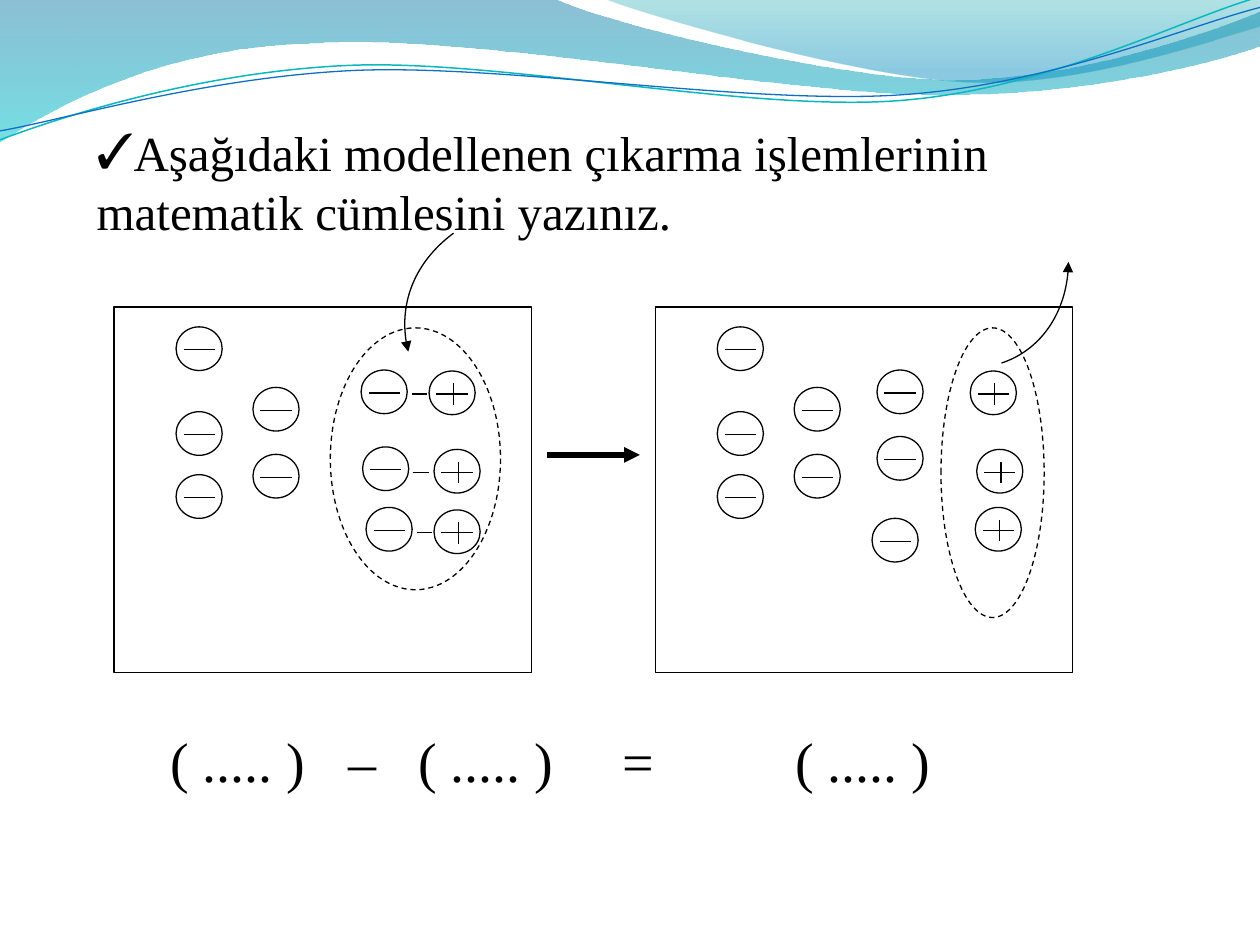
import math
import pptx
import pptx.util
import pptx.dml.color
import pptx.enum.dml
import pptx.enum.shapes
import pptx.oxml
import pptx.oxml.ns

Cm, Pt = pptx.util.Cm, pptx.util.Pt
RGB = pptx.dml.color.RGBColor
SHAPE = pptx.enum.shapes.MSO_SHAPE
BLACK = RGB(0, 0, 0)
TEAL, BLUE = RGB(0x0A, 0xB8, 0xBF), RGB(0x0F, 0x6F, 0xC6)
FONT = "Times New Roman"

TITLE = "Aşağıdaki modellenen çıkarma işlemlerinin matematik cümlesini yazınız."
TERMS = ["( ..... )", "–", "( ..... )", "=", "( ..... )"]
TABS = [3.6, 5, 9.12, 12.6]

# All lengths are in cm. A path is a start point, then lines (x, y)
# or Bézier curves (x1, y1, x2, y2, x, y). Frames are left, top, width, height.
# Bands: frame, path, gradient stops as (position, colour, opacity %)
BANDS = [
    ((-0.03, -0.03, 25.45, 2.9),
     [(0, 0), (11.18, -0.03), (12.09, 0.43, 16.87, 1.6, 19.25, 1.6),
      (21.67, 1.6, 24.33, 0.66, 25.4, 0.23), (25.43, 0.91),
      (24.97, 1.12, 22.1, 1.93, 18.95, 1.91),
      (15.8, 1.91, 9.7, 0.71, 6.53, 0.86),
      (3.28, 0.91, 1.17, 2.11, -0.03, 2.87)],
     [(0, RGB(0x00, 0x74, 0xA1), 45), (1, RGB(0x00, 0xC6, 0xCF), 55)]),
    ((12.17, -0.03, 13.23, 1.78),
     [(12.17, -0.03), (12.93, 0.28, 17.32, 1.57, 19.53, 1.65),
      (21.74, 1.75, 24.41, 0.81, 25.4, 0.53), (25.4, 0)],
     [(0, RGB(0x00, 0xA1, 0xA9), 30), (0.8, RGB(0x00, 0x8B, 0xBF), 45)]),
]
WAVES = [
    ((-0.05, 0.56, 25.45, 1.8),
     [(0, 2.82), (1.22, 2.36, 4.01, 1.45, 7.04, 1.32),
      (10.03, 1.19, 15.06, 2.26, 18.11, 2.03),
      (21.16, 1.8, 23.83, 0.38, 25.35, -0.05)], TEAL, 0.85),
    ((-0.05, 0.76, 25.48, 1.47),
     [(0, 2.64), (1.19, 2.44, 4.17, 1.55, 7.19, 1.42),
      (10.24, 1.3, 15.16, 2.13, 18.21, 1.91),
      (21.23, 1.7, 23.9, 0.53, 25.4, 0.15)], BLUE, 0.75),
]
TILT = -2.7
# Arcs: frame, path, corner of the wedge, turn in degrees
ARCS = [
    ((7.92, 4.72, 2.49, 2.08),
     [(9.14, 4.7), (8.36, 5.28, 8, 6.22, 8.23, 7.09)], (10.64, 6.45), 165.1),
    ((19.66, 5.28, 1.88, 2.03),
     [(20.19, 7.32), (20.98, 7.06, 21.54, 6.22, 21.54, 5.28)],
     (19.66, 5.28), 0),
]

# Counters are placed from the top left corner of their box
TOP, WIDE, HIGH = 6.19, 8.41, 7.37
ALONE = [(1.25, 0.4), (1.25, 2.11), (1.25, 3.38), (2.8, 1.62), (2.8, 2.97)]
BOXES = [
    {"left": 2.3, "paired": True, "oval": (4.36, 0.42, 3.43, 5.28),
     "minus": [(4.98, 1.27), (5.01, 2.82), (5.08, 4.04)],
     "plus": [(6.35, 1.29), (6.45, 2.87), (6.45, 4.09)]},
    {"left": 13.21, "paired": False, "oval": (5.76, 0.42, 2.08, 5.84),
     "minus": [(4.47, 1.27), (4.47, 2.61), (4.37, 4.26)],
     "plus": [(6.35, 1.29), (6.48, 2.87), (6.45, 4.04)]},
]

deck = pptx.Presentation()
deck.slide_width, deck.slide_height = Cm(25.4), Cm(19.05)
shapes = deck.slides.add_slide(deck.slide_layouts[6]).shapes


def add(parent, tag, **attrs):
    node = parent.makeelement(pptx.oxml.ns.qn(tag), attrs)
    parent.append(node)
    return node


def ink(item, color=BLACK, width=0.75, head=False):
    item.line.color.rgb = color
    item.line.width = Pt(width)
    if head:
        add(item.line._get_or_add_ln(), "a:tailEnd", type="triangle")


def draw(area, outlines, turn=0):
    """Add a freeform of (path, closed, attributes) outlines, turned in its frame."""
    left, top, wide, high = area
    midx, midy = left + wide / 2, top + high / 2
    cos, sin = math.cos(math.radians(turn)), math.sin(math.radians(turn))

    def put(node, x, y):
        """Write a point as it lies before the frame is turned."""
        x, y = x - midx, y - midy
        add(node, "a:pt", x=str(int(Cm(x * cos + y * sin + wide / 2))),
            y=str(int(Cm(y * cos - x * sin + high / 2))))

    form = shapes.build_freeform(Cm(left), Cm(top))
    form.add_line_segments([(Cm(left + wide), Cm(top + high))], close=False)
    item = form.convert_to_shape()
    item.left, item.top, item.width, item.height = map(Cm, area)
    item.rotation = turn
    item.shadow.inherit = False
    item.fill.background()
    paths = item._element.spPr.find(".//" + pptx.oxml.ns.qn("a:pathLst"))
    paths.remove(paths[0])
    for steps, closed, attrs in outlines:
        line = add(paths, "a:path", w=str(int(Cm(wide))),
                   h=str(int(Cm(high))), **attrs)
        put(add(line, "a:moveTo"), *steps[0])
        for step in steps[1:]:
            node = add(line, "a:lnTo" if len(step) == 2 else "a:cubicBezTo")
            for i in range(0, len(step), 2):
                put(node, *step[i:i + 2])
        if closed:
            add(line, "a:close")
    return item


def frame(kind, *place):
    item = shapes.add_shape(kind, *map(Cm, place))
    item.shadow.inherit = False
    item.fill.background()
    ink(item)
    return item


def rule(*ends, width=0.75, head=False):
    item = shapes.add_connector(pptx.enum.shapes.MSO_CONNECTOR.STRAIGHT,
                                *map(Cm, ends))
    ink(item, width=width, head=head)
    add(item._element.spPr, "a:effectLst")


def token(x, y, plus=False):
    frame(SHAPE.OVAL, x, y, 0.93, 0.88)
    rule(x + 0.15, y + 0.46, x + 0.78, y + 0.46)
    if plus:
        rule(x + 0.49, y + 0.25, x + 0.49, y + 0.68)


def write(words, size, *place):
    box = shapes.add_textbox(*map(Cm, place))
    box.text_frame.word_wrap = True
    para = box.text_frame.paragraphs[0]
    para.text = words
    for run in para.runs:
        run.font.name, run.font.size = FONT, Pt(size)
        run.font.color.rgb = BLACK
    return box, para


for area, steps, stops in BANDS:
    band = draw(area, [(steps, True, {})])
    band.line.fill.background()
    band.fill.gradient()
    band.fill.gradient_angle = 270
    for stop, (spot, color, shown) in zip(band.fill.gradient_stops, stops):
        stop.position = spot
        stop.color.rgb = color
        add(stop._gs[0], "a:alpha", val=str(shown * 1000))
for area, steps, color, width in WAVES:
    ink(draw(area, [(steps, False, {"fill": "none"})], TILT), color, width)

box, para = write("\t".join(TERMS), 32, 2.9, 14.53, 19.33, 1.63)
box.text_frame.margin_left = Cm(0.53)
para.space_after = Pt(10)
tabs = add(para._p.get_or_add_pPr(), "a:tabLst")
for tab in TABS:
    add(tabs, "a:tab", pos=str(int(Cm(tab))), algn="l")

for box in BOXES:
    left = box["left"]
    frame(SHAPE.RECTANGLE, left, TOP, WIDE, HIGH)
    for x, y in ALONE + box["minus"]:
        token(left + x, TOP + y)
    for x, y in box["plus"]:
        token(left + x, TOP + y, plus=True)
    if box["paired"]:
        for (x, _), (_, y) in zip(box["minus"], box["plus"]):
            start, mid = left + x + 1.02, TOP + y + 0.46
            rule(start, mid, start + 0.31, mid)
    x, y, wide, high = box["oval"]
    oval = frame(SHAPE.OVAL, left + x, TOP + y, wide, high)
    oval.line.dash_style = pptx.enum.dml.MSO_LINE.DASH

for area, steps, corner, turn in ARCS:
    arc = draw(area, [(steps, False, {"fill": "none"}),
                      (steps + [corner], True, {"stroke": "0"})], turn)
    ink(arc, head=True)
rule(11.02, 9.17, 12.9, 9.17, width=3, head=True)

box, para = write(TITLE, 28, 1.7, 2.34, 21.59, 2.64)
marks = para._p.get_or_add_pPr()
add(marks, "a:buFont", typeface=FONT)
add(marks, "a:buChar", char="✓")

deck.save("out.pptx")
